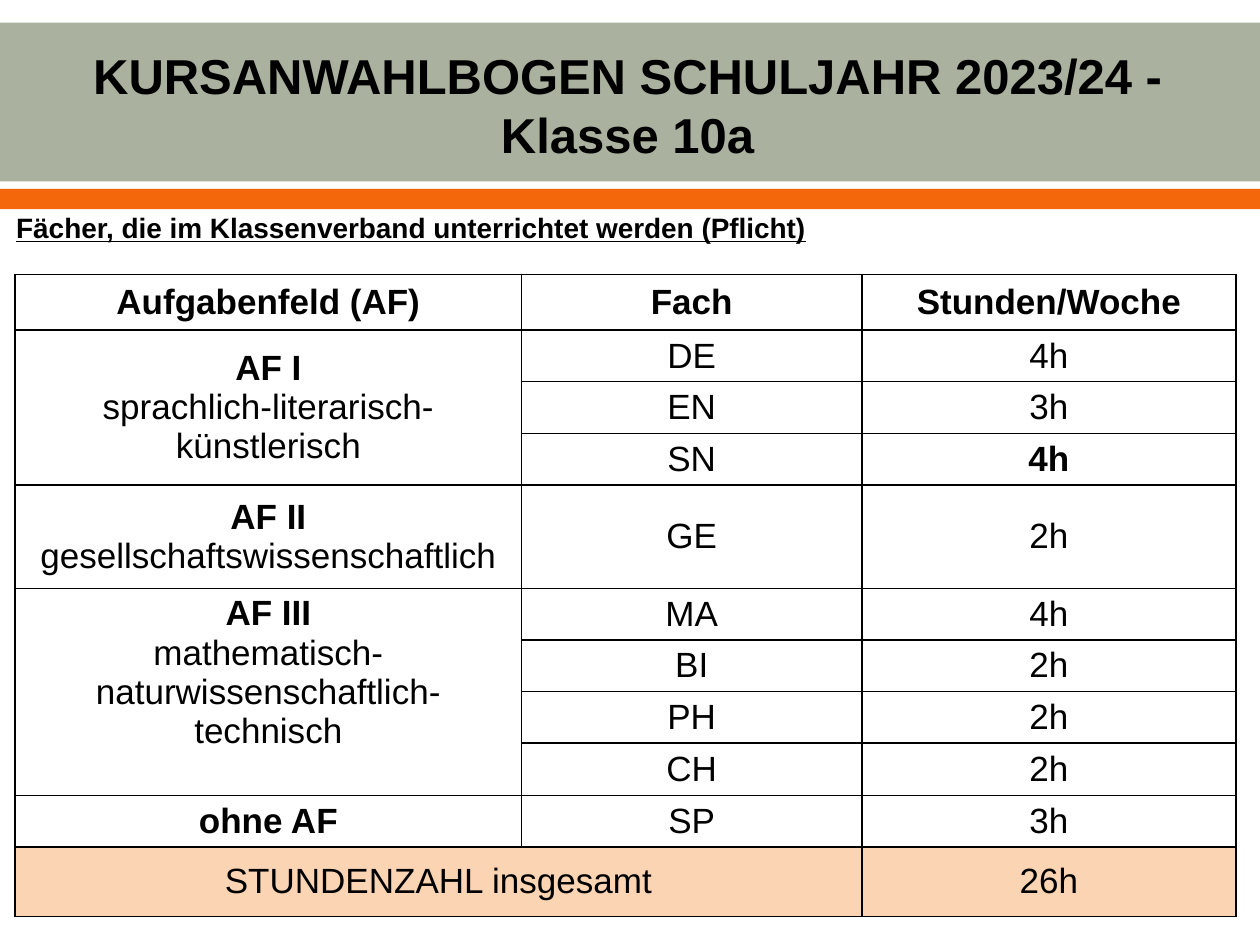
from dataclasses import dataclass

from lxml.etree import SubElement
from pptx import Presentation
from pptx.dml.color import RGBColor
from pptx.enum.shapes import MSO_SHAPE
from pptx.enum.text import MSO_ANCHOR, PP_ALIGN
from pptx.oxml.ns import qn
from pptx.slide import Slide
from pptx.table import Table
from pptx.util import Inches, Pt

COLORS = {"band": "ABB19F", "accent": "F4680B", "total": "FBD4B4", "paper": "FFFFFF", "ink": "000000"}
GRID_UNIT = Inches(0.1)
SLIDE_COLUMNS, SLIDE_ROWS = 100, 75
TABLE_COLUMNS = (40.2, 27, 29.7)
HEADER_ROWS, SUBJECT_ROWS, TOTAL_ROWS = 4.4, 4.1, 5.5
HEADINGS = ("Aufgabenfeld (AF)", "Fach", "Stunden/Woche")
BOLD_HOURS = {"SN"}


@dataclass(frozen=True)
class Area:
    column: float
    row: float
    columns: float
    rows: float

    def lengths(self) -> list[int]:
        return [grid(value) for value in (self.column, self.row, self.columns, self.rows)]


@dataclass(frozen=True)
class Line:
    text: str
    size: int = 20
    bold: bool = False
    underline: bool = False


@dataclass(frozen=True)
class Field:
    name: str
    description: str
    subjects: tuple[tuple[str, str], ...]
    row_units: int = 1
    space_below: float = 0


FIELDS = (
    Field("AF I", "sprachlich-literarisch-künstlerisch", (("DE", "4h"), ("EN", "3h"), ("SN", "4h"))),
    Field("AF II", "gesellschaftswissenschaftlich", (("GE", "2h"),), row_units=2),
    Field("AF III", "mathematisch-naturwissenschaftlich-technisch",
          (("MA", "4h"), ("BI", "2h"), ("PH", "2h"), ("CH", "2h")), space_below=3.1),
    Field("ohne AF", "", (("SP", "3h"),)),
)


def grid(units: float) -> int:
    return round(units * GRID_UNIT)


def color(name: str) -> RGBColor:
    return RGBColor.from_string(COLORS[name])


def apply(target, values: dict) -> None:
    for name, value in values.items():
        setattr(target, name, value)


def write_lines(frame, lines: list[Line], alignment: PP_ALIGN) -> None:
    for index, line in enumerate(lines):
        para = frame.add_paragraph() if index else frame.paragraphs[0]
        para.alignment = alignment
        span = para.add_run()
        span.text = line.text
        apply(span.font, {"name": "Arial", "size": Pt(line.size),
                          "bold": line.bold, "underline": line.underline})
        span.font.color.rgb = color("ink")


def draw_band(page: Slide, area: Area, fill: str) -> None:
    band = page.shapes.add_shape(MSO_SHAPE.RECTANGLE, *area.lengths())
    band.shadow.inherit = False
    band.fill.solid()
    band.fill.fore_color.rgb = color(fill)
    band.line.fill.background()


def draw_text(page: Slide, area: Area, line: Line, alignment: PP_ALIGN, layout: dict) -> None:
    frame = page.shapes.add_textbox(*area.lengths()).text_frame
    apply(frame, {"word_wrap": True, **layout})
    write_lines(frame, [line], alignment)


def add_borders(cell) -> None:
    properties = cell._tc.get_or_add_tcPr()
    for position, side in enumerate(("lnL", "lnR", "lnT", "lnB")):
        border = SubElement(properties, qn(f"a:{side}"), w=str(Pt(1)))
        SubElement(SubElement(border, qn("a:solidFill")), qn("a:srgbClr"), val=COLORS["ink"])
        properties.insert(position, border)


def fill_cell(table: Table, row: int, column: int, lines: list[Line], space_below: float = 0) -> None:
    cell = table.cell(row, column)
    apply(cell, {"margin_bottom": grid(space_below), "vertical_anchor": MSO_ANCHOR.MIDDLE})
    write_lines(cell.text_frame, lines, PP_ALIGN.CENTER)


def draw_schedule(page: Slide, column: float, row: float) -> None:
    subject_rows = [field.row_units * SUBJECT_ROWS for field in FIELDS for _ in field.subjects]
    heights = [HEADER_ROWS, *subject_rows, TOTAL_ROWS]
    area = Area(column, row, sum(TABLE_COLUMNS), sum(heights))
    table = page.shapes.add_table(len(heights), len(TABLE_COLUMNS), *area.lengths()).table
    apply(table, {"first_row": False, "horz_banding": False})
    for table_column, width in zip(table.columns, TABLE_COLUMNS):
        table_column.width = grid(width)
    for table_row, height in zip(table.rows, heights):
        table_row.height = grid(height)

    last = len(heights) - 1
    for row_index in range(len(heights)):
        for column_index in range(len(TABLE_COLUMNS)):
            cell = table.cell(row_index, column_index)
            apply(cell, {"margin_left": grid(0.7), "margin_right": grid(0.7),
                         "margin_top": 0, "margin_bottom": 0})
            cell.fill.solid()
            cell.fill.fore_color.rgb = color("total" if row_index == last else "paper")
            add_borders(cell)

    for column_index, heading in enumerate(HEADINGS):
        fill_cell(table, 0, column_index, [Line(heading, bold=True)])
    first = 1
    for field in FIELDS:
        end = first + len(field.subjects) - 1
        if end > first:
            table.cell(first, 0).merge(table.cell(end, 0))
        lines = [Line(field.name, bold=True)]
        if field.description:
            lines.append(Line(field.description))
        fill_cell(table, first, 0, lines, field.space_below)
        for row_index, (subject, hours) in enumerate(field.subjects, first):
            fill_cell(table, row_index, 1, [Line(subject)])
            fill_cell(table, row_index, 2, [Line(hours, bold=subject in BOLD_HOURS)])
        first = end + 1
    table.cell(last, 0).merge(table.cell(last, 1))
    fill_cell(table, last, 0, [Line("STUNDENZAHL insgesamt")])
    fill_cell(table, last, 2, [Line("26h")])


def main() -> None:
    deck = Presentation()
    apply(deck, {"slide_width": grid(SLIDE_COLUMNS), "slide_height": grid(SLIDE_ROWS)})
    page = deck.slides.add_slide(deck.slide_layouts[6])
    draw_band(page, Area(0, 1.8, SLIDE_COLUMNS, 12.6), "band")
    draw_band(page, Area(0, 15, SLIDE_COLUMNS, 1.6), "accent")
    draw_text(page, Area(-0.2, 2.6, SLIDE_COLUMNS, 15),
              Line("KURSANWAHLBOGEN SCHULJAHR 2023/24 - Klasse 10a", size=28, bold=True),
              PP_ALIGN.CENTER, {"vertical_anchor": MSO_ANCHOR.MIDDLE, "margin_bottom": grid(4.1)})
    draw_schedule(page, 1.2, 21.8)
    draw_text(page, Area(0.3, 16.2, 65.5, 6.7),
              Line("Fächer, die im Klassenverband unterrichtet werden (Pflicht)",
                   size=16, bold=True, underline=True),
              PP_ALIGN.LEFT, {"vertical_anchor": MSO_ANCHOR.TOP})
    deck.save("out.pptx")


if __name__ == "__main__":
    main()
